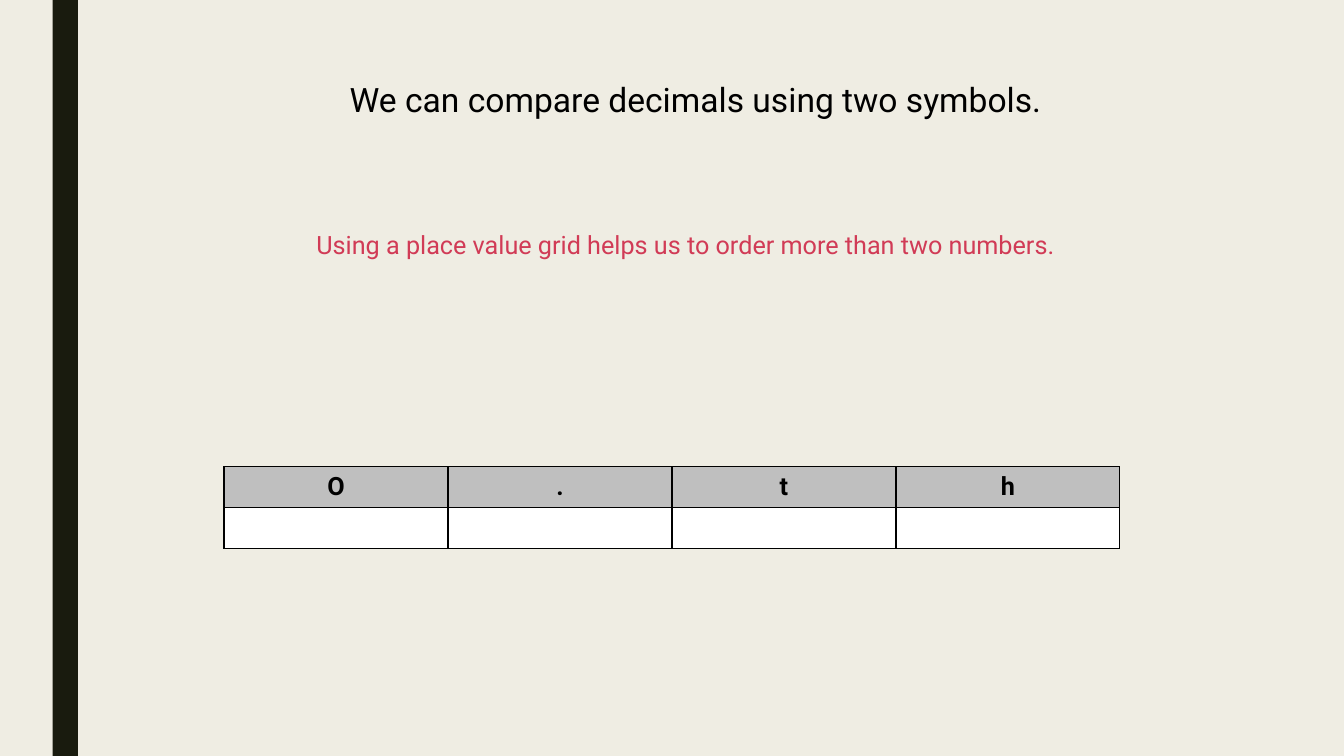
"""Build a slide on comparing decimals with a place value grid."""
from dataclasses import dataclass

import lxml.etree
import pptx
import pptx.dml.color
import pptx.enum.shapes
import pptx.enum.text
import pptx.oxml.ns
import pptx.util

Pt = pptx.util.Pt


@dataclass(frozen=True)
class Theme:
    """Colours, font and type sizes of the slide."""
    background: str = "EFEDE3"
    stripe: str = "191B0E"
    ink: str = "000000"
    accent: str = "D13B56"
    header: str = "BFBFBF"
    blank: str = "FFFFFF"
    font: str = "Roboto"
    title_size: int = 24
    body_size: int = 18


THEME = Theme()


def paint(fill, colour):
    """Give a fill one solid colour."""
    fill.solid()
    fill.fore_color.rgb = pptx.dml.color.RGBColor.from_string(colour)


def write(frame, text, *, size=THEME.body_size, colour=THEME.ink, bold=False):
    """Write one centred paragraph in a text frame."""
    para = frame.paragraphs[0]
    para.alignment = pptx.enum.text.PP_ALIGN.CENTER
    span = para.add_run()
    span.text = text
    span.font.name = THEME.font
    span.font.size = Pt(size)
    span.font.bold = bold
    span.font.color.rgb = pptx.dml.color.RGBColor.from_string(colour)


def place(box, left, top, width, height):
    """Move and size a shape, with lengths in points."""
    box.left, box.top, box.width, box.height = map(Pt, (left, top, width, height))


def set_frame(frame, right_inset):
    """Set wrapping, anchor and right inset of a text frame."""
    frame.word_wrap = True
    frame.auto_size = pptx.enum.text.MSO_AUTO_SIZE.SHAPE_TO_FIT_TEXT
    frame.vertical_anchor = pptx.enum.text.MSO_ANCHOR.TOP
    frame.margin_right = Pt(right_inset)


def add_stripe(page, height):
    """Add the dark vertical stripe at the left."""
    stripe = page.shapes.add_shape(
        pptx.enum.shapes.MSO_SHAPE.RECTANGLE, Pt(37.6), Pt(0), Pt(18), height)
    stripe.shadow.inherit = False
    stripe.line.fill.background()
    paint(stripe.fill, THEME.stripe)


def add_title(page, text):
    """Fill and move the title placeholder."""
    title = page.shapes.title
    place(title, 160, 52.5, 685.5, 36)
    set_frame(title.text_frame, 19.2)
    write(title.text_frame, text, size=THEME.title_size)


def add_hint(page, text):
    """Add the coloured sentence above the grid."""
    box = page.shapes.add_textbox(Pt(183.6), Pt(160.5), Pt(617), Pt(29))
    set_frame(box.text_frame, 11.7)
    write(box.text_frame, text, colour=THEME.accent)


def add_borders(cell):
    """Draw a one-point line on each side of a cell."""
    qn = pptx.oxml.ns.qn
    properties = cell._tc.get_or_add_tcPr()
    for side in ("a:lnL", "a:lnR", "a:lnT", "a:lnB"):
        line = lxml.etree.SubElement(properties, qn(side), w=str(Pt(1)))
        fill = lxml.etree.SubElement(line, qn("a:solidFill"))
        lxml.etree.SubElement(fill, qn("a:srgbClr"), val=THEME.ink)


def add_grid(page, headings):
    """Add the place value grid with one empty row."""
    rows = (headings, [""] * len(headings))
    grid = page.shapes.add_table(
        len(rows), len(headings), Pt(160), Pt(333.3), Pt(640), Pt(58.4)).table
    for row, (texts, colour) in enumerate(zip(rows, (THEME.header, THEME.blank))):
        for column, text in enumerate(texts):
            cell = grid.cell(row, column)
            add_borders(cell)
            paint(cell.fill, colour)
            cell.vertical_anchor = pptx.enum.text.MSO_ANCHOR.MIDDLE
            if text:
                write(cell.text_frame, text, bold=True)


def main():
    """Build and save the deck."""
    deck = pptx.Presentation()
    deck.slide_width, deck.slide_height = Pt(960), Pt(540)
    page = deck.slides.add_slide(deck.slide_layouts.get_by_name("Title Only"))
    paint(page.background.fill, THEME.background)
    add_stripe(page, deck.slide_height)
    add_title(page, "We can compare decimals using two symbols.")
    add_grid(page, ["O", ".", "t", "h"])
    add_hint(page, "Using a place value grid helps us to order more than two numbers.")
    deck.save("out.pptx")


if __name__ == "__main__":
    main()
